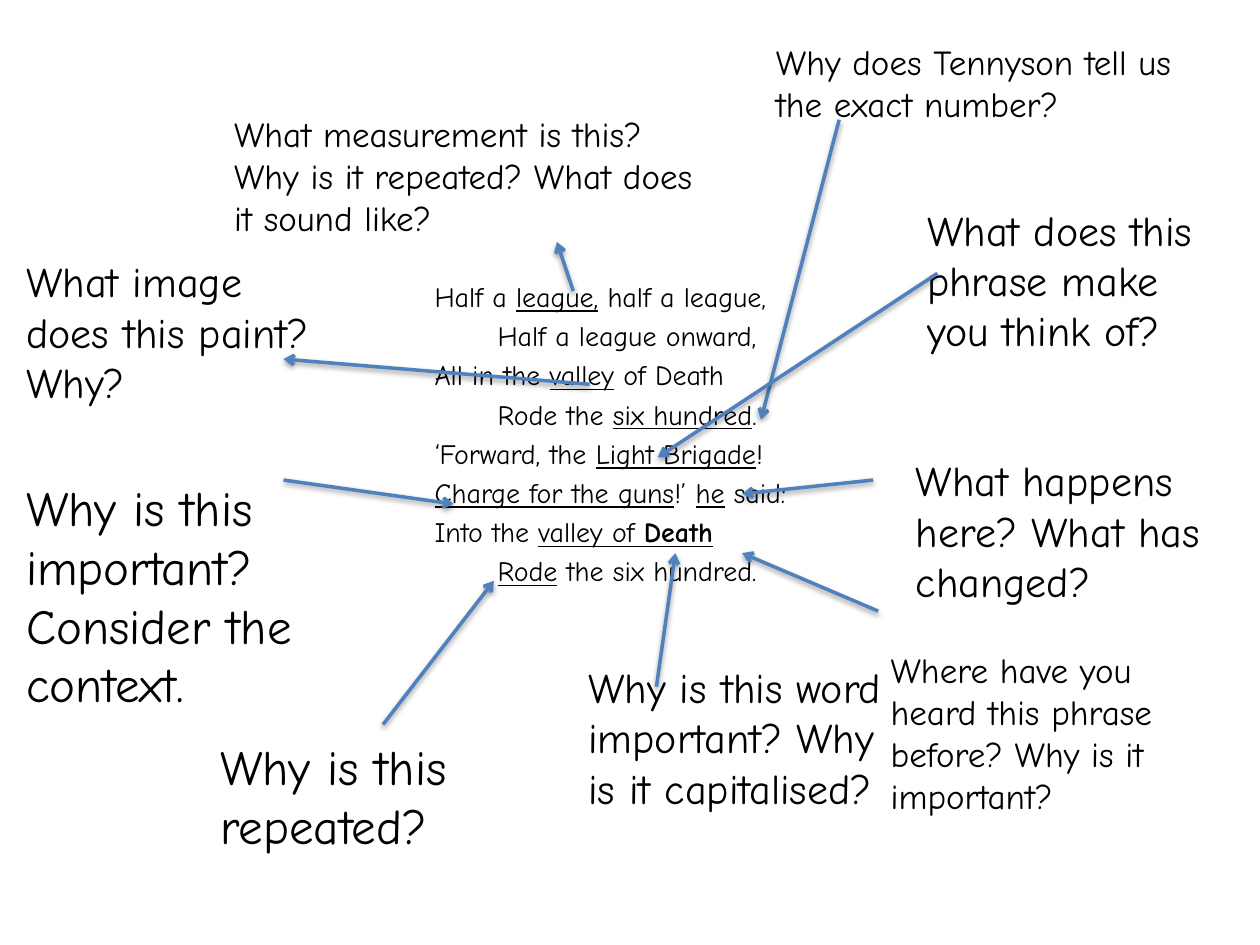
import pptx
import pptx.util
import pptx.dml.color
import pptx.enum.shapes
import pptx.enum.text
import pptx.oxml
import pptx.oxml.ns

BLACK = pptx.dml.color.RGBColor(0x00, 0x00, 0x00)
BLUE = pptx.dml.color.RGBColor(0x4F, 0x81, 0xBD)
FONT = "Comic Neue"
NAMESPACE = pptx.oxml.ns.nsdecls("a")
SHADOW = (
    f'<a:effectLst {NAMESPACE}><a:outerShdw blurRad="40000" dist="20000" dir="5400000" rotWithShape="0">'
    '<a:srgbClr val="000000"><a:alpha val="38000"/></a:srgbClr></a:outerShdw></a:effectLst>'
)
ARROWHEAD = f'<a:tailEnd {NAMESPACE} type="arrow"/>'

presentation = pptx.Presentation()
presentation.slide_width = pptx.util.Inches(10)
presentation.slide_height = pptx.util.Inches(7.5)
slide = presentation.slides.add_slide(presentation.slide_layouts[6])
column = presentation.slide_width / 100
row = presentation.slide_height / 75


def add_text_box(left, top, width, height, fit):
    shape = slide.shapes.add_textbox(
        round(left * column), round(top * row), round(width * column), round(height * row)
    )
    frame_format = {"word_wrap": True, "auto_size": fit}
    for name, value in frame_format.items():
        setattr(shape.text_frame, name, value)
    return shape.text_frame


def add_run(paragraph, text, size, **extra):
    run = paragraph.add_run()
    run.text = text
    run.font.color.rgb = BLACK
    font_format = {"name": FONT, "size": pptx.util.Pt(size), **extra}
    for name, value in font_format.items():
        setattr(run.font, name, value)


poem = [
    "Half a _league,_ half a league,",
    "\tHalf a league onward,",
    "All in the _valley_ of Death",
    "\tRode the _six hundred_.",
    "‘Forward, the _Light Brigade_!",
    "_Charge for the guns_!’ _he_ said:",
    "Into the _valley of __Death_",
    "\t_Rode_ the six hundred.",
]
poem_frame = add_text_box(33.5, 21.7, 33.1, 26.8, pptx.enum.text.MSO_AUTO_SIZE.NONE)
for number, verse in enumerate(poem):
    paragraph = poem_frame.add_paragraph() if number else poem_frame.paragraphs[0]
    paragraph.space_before = pptx.util.Pt(3.2)
    paragraph._p.get_or_add_pPr().set("defTabSz", str(pptx.util.Inches(0.5)))
    for index, part in enumerate(verse.split("_")):
        if part:
            add_run(paragraph, part, 16, underline=index % 2 == 1, bold=part == "Death")

questions = [
    (17.6, 8.4, 40, 11.1, 20, "What measurement is this? Why is it repeated? What does it sound like?"),
    (1.1, 19.8, 25.5, 13.1, 24, "What image does this paint? Why?"),
    (60.6, 2.7, 36.6, 7.7, 20, "Why does Tennyson tell us the exact number?"),
    (72.6, 15.7, 25.5, 17.2, 24, "What does this phrase make you think of?"),
    (71.7, 35.6, 25.5, 13.1, 24, "What happens here? What has changed?"),
    (1.1, 37.4, 25.5, 19.9, 28, "Why is this important? Consider the context."),
    (69.7, 51, 25.5, 14.5, 20, "Where have you heard this phrase before? Why is it important?"),
    (16.5, 58, 25.5, 10.4, 28, "Why is this repeated?"),
    (45.7, 52, 25.5, 21.2, 24, "Why is this word important? Why is it capitalised?"),
]
for left, top, width, height, size, question in questions:
    frame = add_text_box(left, top, width, height, pptx.enum.text.MSO_AUTO_SIZE.SHAPE_TO_FIT_TEXT)
    add_run(frame.paragraphs[0], question, size)

arrows = [
    (45.5, 23.1, 44.2, 19.2),
    (46.8, 30.5, 22.5, 28.5),
    (66.6, 9.5, 60.4, 33.3),
    (74.4, 21.7, 52.2, 36.3),
    (69.3, 38.1, 58.9, 39.2),
    (22.5, 38.1, 36, 40),
    (30.4, 57.5, 39.2, 46.1),
    (69.7, 48.5, 58.9, 43.9),
    (52.1, 54.5, 53.6, 43.9),
]
for start_x, start_y, end_x, end_y in arrows:
    connector = slide.shapes.add_connector(
        pptx.enum.shapes.MSO_CONNECTOR.STRAIGHT,
        round(start_x * column), round(start_y * row), round(end_x * column), round(end_y * row),
    )
    connector.line.color.rgb = BLUE
    connector.line.width = pptx.util.Pt(2)
    connector.line._get_or_add_ln().append(pptx.oxml.parse_xml(ARROWHEAD))
    connector._element.spPr.append(pptx.oxml.parse_xml(SHADOW))

presentation.save("out.pptx")
